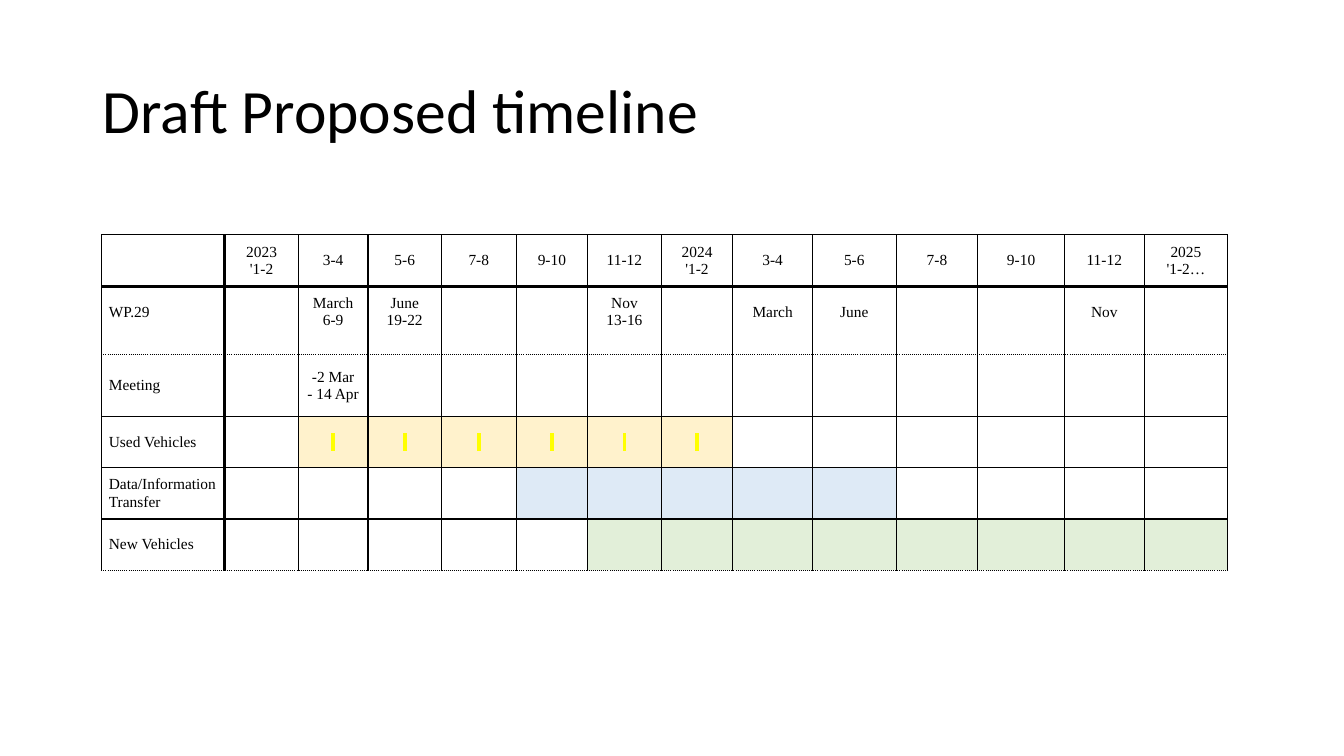
"""Build the draft timeline slide."""
import copy
from dataclasses import dataclass

import pptx
import pptx.dml.color
import pptx.enum.text
import pptx.oxml.ns
import pptx.oxml.xmlchemy
import pptx.util
from pptx.util import Inches

qn = pptx.oxml.ns.qn
Pt = pptx.util.Pt
ALIGN = pptx.enum.text.PP_ALIGN
MIDDLE = pptx.enum.text.MSO_ANCHOR.MIDDLE


@dataclass(frozen=True)
class Theme:
    ink: str = "000000"
    used: str = "FFF2CC"
    data: str = "DEEAF6"
    new: str = "E2EFD9"
    marker: str = "FFFF00"
    title_font: str = "Calibri"
    table_font: str = "Times New Roman"
    title_size: int = 44
    table_size: int = 11
    empty_size: int = 8
    thin: float = 1
    thick: float = 2.25


THEME = Theme()
PLAIN_STYLE = "{2D5ABB26-0587-4C30-8999-92F81FD0307C}"
COLUMN_WIDTHS = [1.22, 0.73, 0.69, 0.73, 0.74, 0.71, 0.73,
                 0.71, 0.79, 0.83, 0.81, 0.86, 0.79, 0.83]
ROW_HEIGHTS = [0.51, 0.51, 0.17, 0.61, 0.51, 0.51, 0.51]
PERIODS = ["2023\v'1-2", "3-4", "5-6", "7-8", "9-10", "11-12", "2024\v'1-2",
           "3-4", "5-6", "7-8", "9-10", "11-12", "2025\v'1-2…"]
ROWS = [
    dict(enumerate(PERIODS, start=1)),
    {0: "WP.29", 2: "March\v6-9", 3: "June\v19-22", 6: "Nov\v13-16",
     8: "March", 9: "June", 12: "Nov"},
    {},
    {0: "Meeting", 2: "-2 Mar\n- 14 Apr"},
    {0: "Used Vehicles"} | {column: " " for column in range(2, 8)},
    {0: "Data/Information Transfer"},
    {0: "New Vehicles"},
]
PHASES = {4: (range(2, 8), THEME.used),
          5: (range(5, 10), THEME.data),
          6: (range(6, 14), THEME.new)}
RULES = [(THEME.thin, "solid"), (THEME.thick, "solid"), None,
         (THEME.thin, "sysDot"), (THEME.thin, "solid"), (THEME.thin, "solid"),
         (THEME.thin, "solid"), (THEME.thin, "sysDot")]


def style_span(span, font, size):
    """Give a run its font, size and colour."""
    span.font.name = font
    span.font.size = Pt(size)
    span.font.color.rgb = pptx.dml.color.RGBColor.from_string(THEME.ink)


def highlight(span):
    """Mark a run with the highlight colour."""
    mark = pptx.oxml.xmlchemy.OxmlElement("a:highlight")
    pptx.oxml.xmlchemy.OxmlElement("a:srgbClr")
    colour = pptx.oxml.xmlchemy.OxmlElement("a:srgbClr")
    colour.set("val", THEME.marker)
    mark.append(colour)
    span._r.rPr.find(qn("a:solidFill")).addnext(mark)


def add_title(page, text):
    """Add the slide title."""
    box = page.shapes.add_textbox(Inches(0.92), Inches(0.4), Inches(11.5), Inches(1.45))
    frame = box.text_frame
    frame.word_wrap = True
    frame.vertical_anchor = MIDDLE
    frame.text = text
    para = frame.paragraphs[0]
    para.line_spacing = 0.9
    style_span(para.runs[0], THEME.title_font, THEME.title_size)


def write_cell(cell, text, align):
    """Fill a cell with formatted text."""
    cell.vertical_anchor = MIDDLE
    cell.margin_left = cell.margin_right = Inches(0.07)
    cell.margin_top = cell.margin_bottom = 0
    cell.text_frame.text = text
    for para in cell.text_frame.paragraphs:
        para.alignment = align
        for span in para.runs:
            style_span(span, THEME.table_font, THEME.table_size)
            if text == " ":
                highlight(span)
        for line_break in para._p.findall(qn("a:br")):
            line_break.append(copy.deepcopy(para.runs[0]._r.rPr))
        if not para.runs:
            ending = pptx.oxml.xmlchemy.OxmlElement("a:endParaRPr")
            ending.set("sz", str(THEME.empty_size * 100))
            para._p.append(ending)


def border_line(side, rule):
    """Make one cell border, empty when there is no rule."""
    line = pptx.oxml.xmlchemy.OxmlElement(f"a:ln{side}")
    if rule is None:
        line.append(pptx.oxml.xmlchemy.OxmlElement("a:noFill"))
        return line
    width, dash = rule
    line.set("w", str(int(Pt(width))))
    fill = pptx.oxml.xmlchemy.OxmlElement("a:solidFill")
    colour = pptx.oxml.xmlchemy.OxmlElement("a:srgbClr")
    colour.set("val", THEME.ink)
    fill.append(colour)
    pattern = pptx.oxml.xmlchemy.OxmlElement("a:prstDash")
    pattern.set("val", dash)
    line.extend([fill, pattern])
    return line


def set_borders(cell, row, column):
    """Draw the four borders that belong to a grid position."""
    thin, thick = (THEME.thin, "solid"), (THEME.thick, "solid")
    sides = {"L": thick if column == 1 else thin,
             "R": thick if column == 0 else thin,
             "T": RULES[row],
             "B": RULES[row + 1]}
    sides["T"] = thin if row == 0 else sides["T"]
    properties = cell._tc.get_or_add_tcPr()
    for index, (side, rule) in enumerate(sides.items()):
        properties.insert(index, border_line(side, rule))


def set_fill(cell, row, column):
    """Shade a cell inside its phase and leave the others clear."""
    columns, colour = PHASES.get(row, ((), None))
    if column in columns:
        cell.fill.solid()
        cell.fill.fore_color.rgb = pptx.dml.color.RGBColor.from_string(colour)
    else:
        cell.fill.background()


def add_timeline(page):
    """Add the timeline table."""
    frame = page.shapes.add_table(len(ROW_HEIGHTS), len(COLUMN_WIDTHS), Inches(1.01),
                                  Inches(2.33), Inches(sum(COLUMN_WIDTHS)),
                                  Inches(sum(ROW_HEIGHTS)))
    table = frame.table
    table.first_row = table.horz_banding = False
    table._tbl.tblPr.find(qn("a:tableStyleId")).text = PLAIN_STYLE
    for column, width in enumerate(COLUMN_WIDTHS):
        table.columns[column].width = Inches(width)
    for row, height in enumerate(ROW_HEIGHTS):
        table.rows[row].height = Inches(height)
        for column in range(len(COLUMN_WIDTHS)):
            cell = table.cell(row, column)
            align = ALIGN.CENTER if column else ALIGN.LEFT
            write_cell(cell, ROWS[row].get(column, ""), align)
            set_fill(cell, row, column)
            set_borders(cell, row, column)


def main():
    """Build and save the deck."""
    deck = pptx.Presentation()
    deck.slide_width, deck.slide_height = Inches(13.33), Inches(7.5)
    page = deck.slides.add_slide(deck.slide_layouts[6])
    add_title(page, "Draft Proposed timeline")
    add_timeline(page)
    deck.save("out.pptx")


if __name__ == "__main__":
    main()
